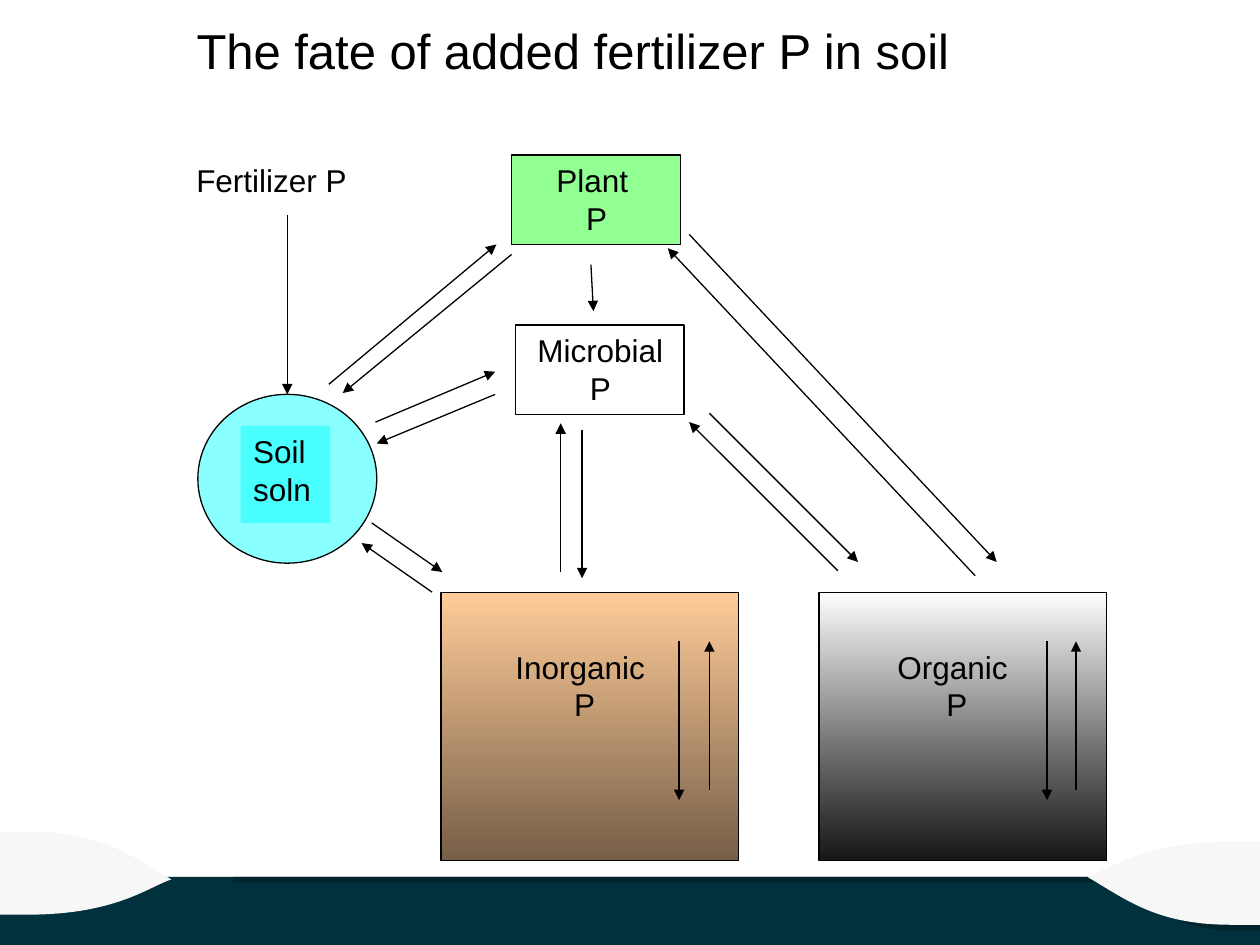
from lxml.etree import Element, SubElement
from pptx import Presentation
from pptx.dml.color import RGBColor
from pptx.enum.shapes import MSO_CONNECTOR, MSO_SHAPE
from pptx.enum.text import MSO_ANCHOR, MSO_AUTO_SIZE, PP_ALIGN
from pptx.oxml.ns import qn
from pptx.util import Inches, Pt

COLORS = {
    "black": "000000", "white": "FFFFFF", "cyan": "00FFFF", "green": "00FF00",
    "tan": "FFCC99", "brown": "765E47",
    "ground": "00313C", "ground_shade": "00252D", "hill": "F7F7F7",
}
FONT = "Arial"

# A contour is a start point, then two control points and an end point per curve.
RIGHT_HILL = [
    (9.78, 6.68),
    (9.08, 6.68), (8.83, 6.89), (8.63, 6.96),
    (8.94, 7.14), (9.18, 7.34), (9.77, 7.34),
    (9.91, 7.34), (10, 7.34), (10, 7.34),
    (10, 6.68), (10, 6.68), (10, 6.68),
]
LEFT_HILL = [(9.99 - x, 13.94 - y) for x, y in RIGHT_HILL]
SHADE_STRIP = [
    (8.89, 6.96),
    (1.85, 6.96), (1.85, 6.96), (1.85, 6.96),
    (1.85, 7.01), (1.85, 7.01), (1.85, 7.01),
    (8.33, 7.01), (8.33, 7.01), (8.33, 7.01),
    (8.69, 7.01), (8.81, 7), (8.89, 6.96),
]
SHADE_CORNER = [
    (10, 6.96),
    (8.89, 6.96), (8.89, 6.96), (8.89, 6.96),
    (9.08, 7.16), (9.33, 7.39), (9.81, 7.39),
    (9.93, 7.39), (10, 7.39), (10, 7.39),
    (10, 6.96), (10, 6.96), (10, 6.96),
]

ARROWS = [
    ((2.28, 1.71), (2.28, 3.13)),  # fertilizer to soil solution
    ((2.61, 3.05), (3.94, 1.94)), ((4.06, 2.02), (2.72, 3.12)),  # soil, plant
    ((2.98, 3.35), (3.93, 2.95)), ((3.93, 3.13), (2.99, 3.52)),  # soil, microbial
    ((2.95, 4.15), (3.51, 4.54)), ((3.43, 4.7), (2.87, 4.31)),  # soil, inorganic
    ((4.69, 2.1), (4.71, 2.47)),  # plant to microbial
    ((4.45, 4.54), (4.45, 3.36)), ((4.62, 3.41), (4.62, 4.59)),  # microbial, inorganic
    ((5.63, 3.28), (6.81, 4.46)), ((6.65, 4.53), (5.47, 3.35)),  # microbial, organic
    ((5.47, 1.86), (7.91, 4.46)), ((7.74, 4.57), (5.3, 1.97)),  # plant, organic
    ((5.39, 5.09), (5.39, 6.35)), ((5.63, 6.27), (5.63, 5.09)),  # within inorganic
    ((8.31, 5.09), (8.31, 6.35)), ((8.54, 6.27), (8.54, 5.09)),  # within organic
]


def rgb(name):
    return RGBColor.from_string(COLORS[name])


def set_alpha(color_parent, percent):
    """Set the opacity of the first RGB colour below an XML element."""
    color = color_parent.find(".//" + qn("a:srgbClr"))
    SubElement(color, qn("a:alpha")).set("val", str(percent * 1000))


def write_text(shape, text, size, align, wrap):
    frame = shape.text_frame
    frame.word_wrap = wrap
    frame.auto_size = MSO_AUTO_SIZE.SHAPE_TO_FIT_TEXT
    frame.vertical_anchor = MSO_ANCHOR.TOP
    paragraph = frame.paragraphs[0]
    paragraph.text = text
    paragraph.alignment = align
    paragraph.font.size = Pt(size)
    paragraph.font.name = FONT
    paragraph.font.color.rgb = rgb("black")


def add_label(shapes, box, text, align=PP_ALIGN.CENTER):
    write_text(shapes.add_textbox(*map(Inches, box)), text, 18, align, wrap=False)


def add_box(shapes, box, fill=None, alpha=None, outlined=True, kind=MSO_SHAPE.RECTANGLE):
    shape = shapes.add_shape(kind, *map(Inches, box))
    shape.shadow.inherit = False
    if fill:
        shape.fill.solid()
        shape.fill.fore_color.rgb = rgb(fill)
        if alpha:
            set_alpha(shape.fill._xPr.find(qn("a:solidFill")), alpha)
    else:
        shape.fill.background()
    if outlined:
        shape.line.color.rgb = rgb("black")
        shape.line.width = Pt(0.75)
    else:
        shape.line.fill.background()
    return shape


def add_gradient_box(shapes, box, top, bottom, bottom_alpha=None):
    shape = add_box(shapes, box)
    shape.fill.gradient()
    shape.fill.gradient_angle = 270
    stops = shape.fill.gradient_stops
    for stop, name in zip(stops, (top, bottom)):
        stop.color.rgb = rgb(name)
    if bottom_alpha:
        set_alpha(stops[1]._gs, bottom_alpha)


def add_arrow(shapes, start, end):
    connector = shapes.add_connector(
        MSO_CONNECTOR.STRAIGHT, *map(Inches, (*start, *end)))
    connector.line.color.rgb = rgb("black")
    connector.line.width = Pt(0.75)
    SubElement(connector.line._get_or_add_ln(), qn("a:tailEnd")).set("type", "triangle")
    SubElement(connector._element.spPr, qn("a:effectLst"))


def bend_segments(shape):
    """Turn every three line segments of a freeform into one cubic curve."""
    segments = list(shape._element.iter(qn("a:lnTo")))
    for first in range(0, len(segments), 3):
        curve = Element(qn("a:cubicBezTo"))
        segments[first].addprevious(curve)
        for segment in segments[first:first + 3]:
            curve.append(segment[0])
            segment.getparent().remove(segment)


def add_curved_shape(shapes, contours, fill):
    builder = shapes.build_freeform(*map(Inches, contours[0][0]))
    for index, (start, *points) in enumerate(contours):
        if index:
            builder.move_to(*map(Inches, start))
        builder.add_line_segments([(Inches(x), Inches(y)) for x, y in points], close=True)
    shape = builder.convert_to_shape()
    bend_segments(shape)
    shape.shadow.inherit = False
    shape.fill.solid()
    shape.fill.fore_color.rgb = rgb(fill)
    shape.line.fill.background()


def add_landscape(shapes):
    add_box(shapes, (0, 6.96, 10, 0.54), "ground", outlined=False)
    add_curved_shape(shapes, [SHADE_STRIP, SHADE_CORNER], "ground_shade")
    for hill in (RIGHT_HILL, LEFT_HILL):
        add_curved_shape(shapes, [hill], "hill")


def set_title(title, text):
    title.left, title.top, title.width, title.height = map(
        Inches, (1.46, 0.11, 7.17, 0.57))
    write_text(title, text, 28, PP_ALIGN.LEFT, wrap=True)


def add_soil_solution(shapes):
    group = shapes.add_group_shape().shapes
    add_box(group, (1.57, 3.13, 1.42, 1.34), "cyan", 46, kind=MSO_SHAPE.OVAL)
    caption = add_box(group, (1.91, 3.38, 0.71, 0.77), "cyan", 46, outlined=False)
    write_text(caption, "Soil\nsoln", 18, PP_ALIGN.LEFT, wrap=False)


def add_microbial(shapes):
    group = shapes.add_group_shape().shapes
    add_box(group, (4.09, 2.58, 1.34, 0.71))
    add_label(group, (4.11, 2.58, 1.31, 0.77), "Microbial\nP")


def main():
    presentation = Presentation()
    presentation.slide_width, presentation.slide_height = Inches(10), Inches(7.5)
    slide = presentation.slides.add_slide(presentation.slide_layouts[5])
    shapes = slide.shapes

    add_landscape(shapes)
    set_title(shapes.title, "The fate of added fertilizer P in soil")
    add_label(shapes, (1.46, 1.23, 1.53, 0.43), "Fertilizer P", PP_ALIGN.LEFT)
    add_soil_solution(shapes)
    add_microbial(shapes)
    add_box(shapes, (4.06, 1.23, 1.34, 0.71), "green", 43)
    add_label(shapes, (4.28, 1.23, 0.91, 0.77), "Plant \nP")
    add_gradient_box(shapes, (3.5, 4.7, 2.36, 2.13), "tan", "brown")
    add_label(shapes, (3.93, 5.09, 1.42, 0.77), "Inorganic \nP")
    add_gradient_box(shapes, (6.5, 4.7, 2.28, 2.13), "white", "black", 91)
    add_label(shapes, (6.97, 5.09, 1.25, 0.77), "Organic \nP")
    for start, end in ARROWS:
        add_arrow(shapes, start, end)

    presentation.save("out.pptx")


if __name__ == "__main__":
    main()
